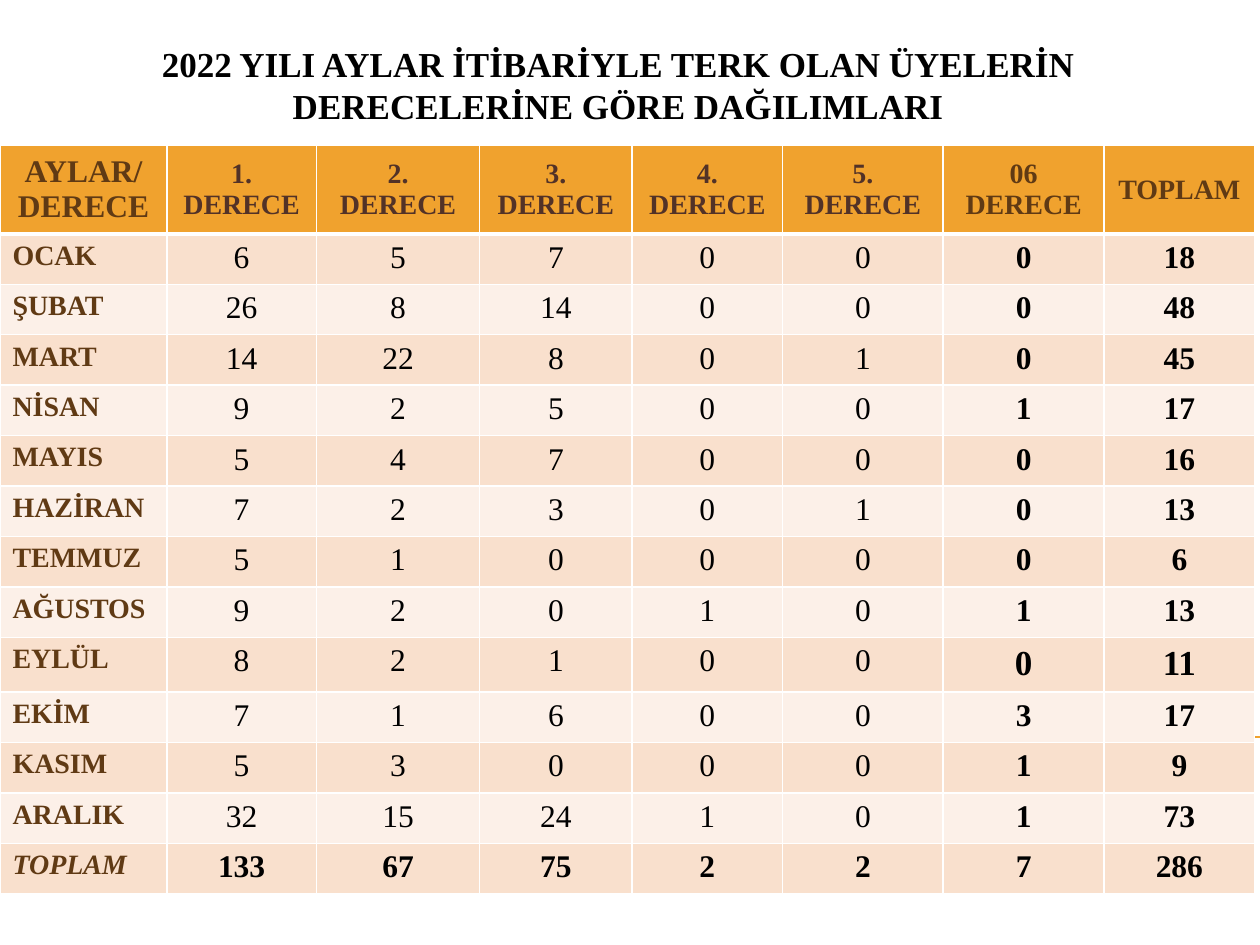
from dataclasses import dataclass

import pptx
import pptx.dml.color
import pptx.enum.shapes
import pptx.enum.text
import pptx.oxml
import pptx.oxml.ns
import pptx.util

Pt = pptx.util.Pt
ALIGN = pptx.enum.text.PP_ALIGN
ANCHOR = pptx.enum.text.MSO_ANCHOR

FONT = "Times New Roman"
ORANGE, WHITE, BLACK = "F0A22E", "FFFFFF", "000000"
BROWN, DARK_BROWN = "603A14", "523227"
BANDS = ("F9E0CD", "FCF0E8")
COLUMN_WIDTHS = (95.4, 85.4, 93.4, 87.1, 86, 91.8, 92, 86)
HEADER_HEIGHT, ROW_HEIGHT, TALL_ROW_HEIGHT = 47.5, 27.65, 30.3


@dataclass(frozen=True)
class Style:
    size: float
    color: str
    bold: bool = True
    italic: bool = False
    align: ALIGN = ALIGN.CENTER


@dataclass(frozen=True)
class Month:
    name: str
    degrees: tuple[int, ...]
    height: float = ROW_HEIGHT
    sum_size: float = 18


MONTHS = (
    Month("OCAK", (6, 5, 7, 0, 0, 0)),
    Month("ŞUBAT", (26, 8, 14, 0, 0, 0)),
    Month("MART", (14, 22, 8, 0, 1, 0)),
    Month("NİSAN", (9, 2, 5, 0, 0, 1)),
    Month("MAYIS", (5, 4, 7, 0, 0, 0)),
    Month("HAZİRAN", (7, 2, 3, 0, 1, 0)),
    Month("TEMMUZ", (5, 1, 0, 0, 0, 0)),
    Month("AĞUSTOS", (9, 2, 0, 1, 0, 1)),
    Month("EYLÜL", (8, 2, 1, 0, 0, 0), TALL_ROW_HEIGHT, 20),
    Month("EKİM", (7, 1, 6, 0, 0, 3)),
    Month("KASIM", (5, 3, 0, 0, 0, 1)),
    Month("ARALIK", (32, 15, 24, 1, 0, 1)),
)
HEADINGS = (
    ("AYLAR/ DERECE", Style(18, BROWN)),
    *((f"{degree}. DERECE", Style(16, DARK_BROWN)) for degree in range(1, 6)),
    ("06 DERECE", Style(16, BROWN)),
    ("TOPLAM", Style(16, BROWN)),
)


def rgb(value: str) -> pptx.dml.color.RGBColor:
    return pptx.dml.color.RGBColor.from_string(value)


def write(paragraph, text: str, style: Style) -> None:
    paragraph.alignment = style.align
    run = paragraph.add_run()
    run.text = text
    run.font.name = FONT
    run.font.size = Pt(style.size)
    run.font.bold = style.bold
    run.font.italic = style.italic
    run.font.color.rgb = rgb(style.color)


def set_border(cell, side: str, width: float) -> None:
    cell._tc.get_or_add_tcPr().append(pptx.oxml.parse_xml(
        f'<a:ln{side} {pptx.oxml.ns.nsdecls("a")} w="{Pt(width)}">'
        f'<a:solidFill><a:srgbClr val="{WHITE}"/></a:solidFill></a:ln{side}>'
    ))


def fill_cell(cell, text: str, style: Style, color: str, anchor: ANCHOR,
              bottom_border: float = 1, top_border: float = 1) -> None:
    for side, width in zip("LRTB", (1, 1, top_border, bottom_border)):
        set_border(cell, side, width)
    cell.fill.solid()
    cell.fill.fore_color.rgb = rgb(color)
    cell.vertical_anchor = anchor
    write(cell.text_frame.paragraphs[0], text, style)


def draw_rule(slide) -> None:
    rule = slide.shapes.add_connector(
        pptx.enum.shapes.MSO_CONNECTOR.STRAIGHT, Pt(40.3), Pt(421.2), Pt(720), Pt(421.2))
    rule.line.color.rgb = rgb(ORANGE)
    rule.line.width = Pt(0.75)
    rule._element.spPr.append(
        pptx.oxml.parse_xml(f'<a:effectLst {pptx.oxml.ns.nsdecls("a")}/>'))


def draw_title(slide) -> None:
    title = slide.shapes.add_textbox(Pt(20.2), Pt(20.9), Pt(666), Pt(62.6)).text_frame
    title.word_wrap = True
    title.vertical_anchor = ANCHOR.TOP
    heading = title.paragraphs[0]
    heading.line_spacing = Pt(24)
    write(heading, "2022 YILI AYLAR İTİBARİYLE TERK OLAN ÜYELERİN DERECELERİNE GÖRE DAĞILIMLARI",
          Style(20, BLACK))


def draw_table(slide) -> None:
    heights = (HEADER_HEIGHT, *(month.height for month in MONTHS), ROW_HEIGHT)
    table = slide.shapes.add_table(
        len(heights), len(COLUMN_WIDTHS), Pt(0), Pt(83.2),
        Pt(sum(COLUMN_WIDTHS)), Pt(sum(heights))).table
    for column, width in zip(table.columns, COLUMN_WIDTHS):
        column.width = Pt(width)
    for row, height in zip(table.rows, heights):
        row.height = Pt(height)

    for column, (text, style) in enumerate(HEADINGS):
        fill_cell(table.cell(0, column), text, style, ORANGE, ANCHOR.MIDDLE, bottom_border=3)

    degree_totals = tuple(map(sum, zip(*(month.degrees for month in MONTHS))))
    for row, month in enumerate((*MONTHS, Month("TOPLAM", degree_totals)), start=1):
        band = BANDS[(row - 1) % 2]
        top_border = 3 if row == 1 else 1
        is_total = row > len(MONTHS)
        fill_cell(table.cell(row, 0), month.name,
                  Style(16, BROWN, italic=is_total, align=ALIGN.LEFT),
                  band, ANCHOR.TOP, top_border=top_border)
        for column, count in enumerate((*month.degrees, sum(month.degrees)), start=1):
            emphasized = column >= 6
            size = month.sum_size if emphasized else 18
            fill_cell(table.cell(row, column), str(count),
                      Style(size, BLACK, bold=emphasized or is_total),
                      band, ANCHOR.TOP, top_border=top_border)


def main() -> None:
    deck = pptx.Presentation()
    deck.slide_width, deck.slide_height = Pt(720), Pt(540)
    slide = deck.slides.add_slide(deck.slide_layouts[6])
    draw_rule(slide)
    draw_title(slide)
    draw_table(slide)
    deck.save("out.pptx")


if __name__ == "__main__":
    main()
